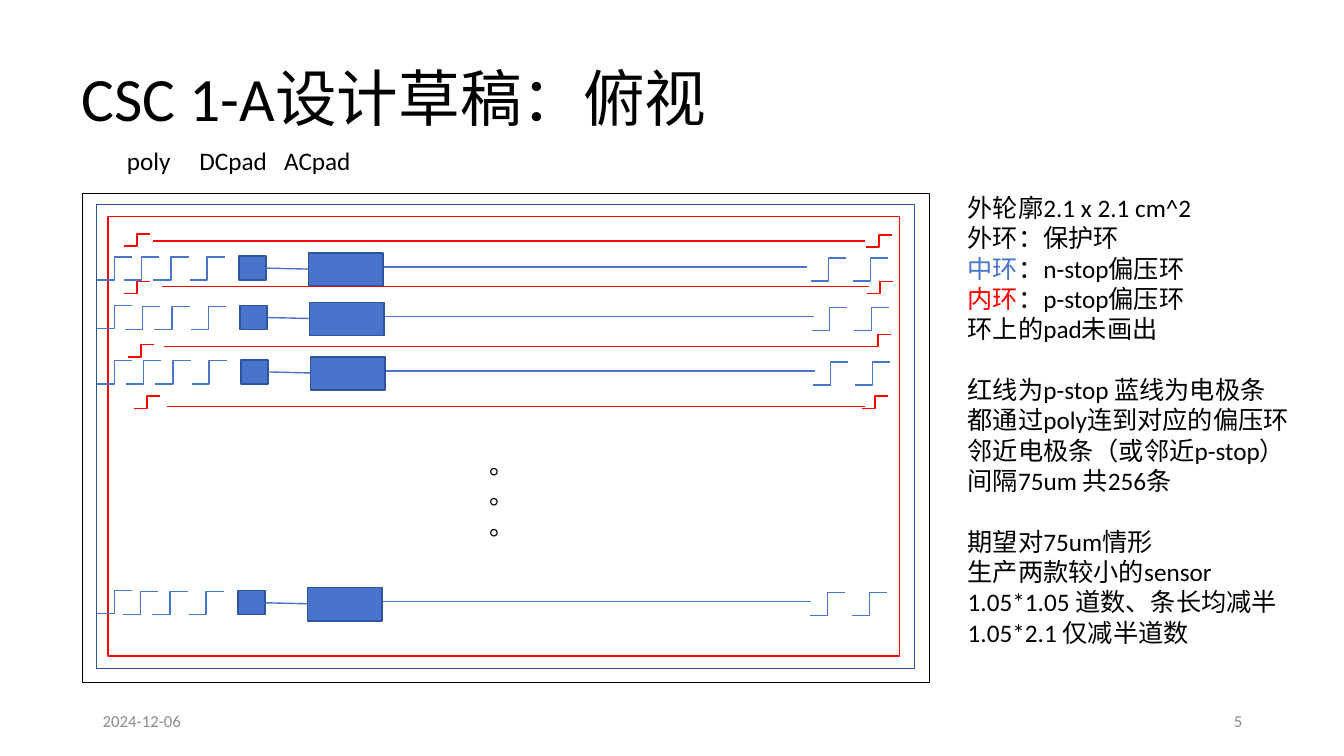
"""Builds the top-view slide of the CSC 1-A sensor design draft."""
from typing import NamedTuple

from lxml import etree
from pptx import Presentation, util as u
from pptx.dml import color
from pptx.enum import shapes, text
from pptx.oxml import ns

PX = 9144
COLOURS = {"black": "000000", "blue": "4874CB", "edge": "2E54A1",
           "red": "FF0000", "grey": "8C8C8C"}
CONNECTOR = shapes.MSO_CONNECTOR
ANCHOR = text.MSO_ANCHOR
ALIGN = text.PP_ALIGN


class Box(NamedTuple):
    left: int
    top: int
    width: int
    height: int


class Ring(NamedTuple):
    box: Box
    colour: str


class Run(NamedTuple):
    words: str
    colour: str = "black"


class Paragraph(NamedTuple):
    runs: tuple[Run, ...]
    before: int = 0


class Label(NamedTuple):
    box: Box
    paragraphs: tuple[Paragraph, ...]
    size: int = 18
    anchor: ANCHOR = ANCHOR.TOP
    align: ALIGN = ALIGN.LEFT
    spacing: float = 1.0
    tabs: tuple[int, ...] = ()


class Electrode(NamedTuple):
    left: int
    top: int
    end: int
    ring_poly_top: int


class PStop(NamedTuple):
    start: int
    end: int
    y: int
    left_poly: tuple[int, int]
    right_poly: tuple[int, int]


def line(words: str, before: int = 0) -> Paragraph:
    return Paragraph((Run(words),), before)


def ring_note(ring: str, colour: str, rest: str) -> Paragraph:
    return Paragraph((Run(ring, colour), Run(rest)))


RINGS = (Ring(Box(82, 192, 840, 485), "black"),
         Ring(Box(96, 203, 811, 460), "edge"),
         Ring(Box(107, 215, 785, 436), "red"))

ELECTRODES = (Electrode(237, 251, 800, 255), Electrode(238, 300, 807, 303),
              Electrode(239, 354, 808, 358), Electrode(236, 583, 804, 586))

P_STOPS = (PStop(152, 858, 239, (123, 232), (859, 233)),
           PStop(161, 862, 284, (123, 279), (860, 279)),
           PStop(163, 858, 344, (127, 342), (858, 332)),
           PStop(166, 858, 403, (133, 393), (855, 393)))

NOTES = (line("外轮廓2.1 x 2.1 cm^2"), line("外环：保护环"),
         ring_note("中环", "blue", "：n-stop偏压环"),
         ring_note("内环", "red", "：p-stop偏压环"),
         line("环上的pad未画出"),
         line("红线为p-stop 蓝线为电极条", 22), line("都通过poly连到对应的偏压环"),
         line("邻近电极条（或邻近p-stop）"), line("间隔75um 共256条"),
         line("期望对75um情形", 22), line("生产两款较小的sensor"),
         line("1.05*1.05 道数、条长均减半"), line("1.05*2.1 仅减半道数"))

LABELS = (
    Label(Box(71, 28, 1150, 145), (line("CSC 1-A设计草稿：俯视"),), 44,
          ANCHOR.MIDDLE, spacing=0.9),
    Label(Box(116, 139, 319, 40), (line("poly\tDCpad\tACpad"),), tabs=(72, 156)),
    Label(Box(950, 186, 384, 464), NOTES),
    Label(Box(476, 441, 52, 101), (line("。"),) * 3),
    Label(Box(92, 695, 300, 40), (Paragraph((Run("2024-12-06", "grey"),)),), 12,
          ANCHOR.MIDDLE),
    Label(Box(942, 695, 300, 40), (Paragraph((Run("5", "grey"),)),), 12,
          ANCHOR.MIDDLE, ALIGN.RIGHT),
)


def rgb(name: str) -> color.RGBColor:
    return color.RGBColor.from_string(COLOURS[name])


def draw_rect(slide, box: Box, edge: str, fill: str = "") -> None:
    rect = slide.shapes.add_shape(shapes.MSO_SHAPE.RECTANGLE, *(v * PX for v in box))
    rect.shadow.inherit = False
    rect.line.color.rgb = rgb(edge)
    rect.line.width = u.Pt(1)
    if fill:
        rect.fill.solid()
        rect.fill.fore_color.rgb = rgb(fill)
    else:
        rect.fill.background()


def draw_line(slide, x1: int, y1: int, x2: int, y2: int, colour: str,
              kind: CONNECTOR = CONNECTOR.STRAIGHT) -> None:
    wire = slide.shapes.add_connector(kind, *(v * PX for v in (x1, y1, x2, y2)))
    wire.line.color.rgb = rgb(colour)
    wire.line.width = u.Pt(1)
    etree.SubElement(wire._element.spPr, ns.qn("a:effectLst"))


def draw_poly(slide, left: int, top: int, colour: str) -> None:
    width, height = (26, 12) if colour == "red" else (35, 23)
    draw_line(slide, left, top + height, left + width, top, colour, CONNECTOR.ELBOW)


def draw_electrode(slide, strip: Electrode) -> None:
    left, top = strip.left, strip.top
    for offset in (-114, -85, -49):
        draw_poly(slide, left + offset, top + 4, "blue")
    draw_poly(slide, 96, strip.ring_poly_top, "blue")
    draw_rect(slide, Box(left, top + 3, 27, 24), "edge", "blue")
    draw_rect(slide, Box(left + 69, top, 74, 33), "edge", "blue")
    draw_line(slide, left + 27, top + 15, left + 69, top + 16, "blue")
    draw_line(slide, left + 144, top + 14, strip.end, top + 14, "blue")
    for offset in (567, 609):
        draw_poly(slide, left + offset, top + 5, "blue")


def draw_p_stop(slide, stop: PStop) -> None:
    draw_line(slide, stop.start, stop.y, stop.end, stop.y, "red")
    for left, top in (stop.left_poly, stop.right_poly):
        draw_poly(slide, left, top, "red")


def draw_label(slide, label: Label) -> None:
    frame = slide.shapes.add_textbox(*(v * PX for v in label.box)).text_frame
    frame.word_wrap = True
    frame.vertical_anchor = label.anchor
    for index, content in enumerate(label.paragraphs):
        paragraph = frame.add_paragraph() if index else frame.paragraphs[0]
        paragraph.alignment = label.align
        paragraph.line_spacing = label.spacing
        paragraph.space_before = u.Pt(content.before)
        if label.tabs:
            stops = etree.SubElement(paragraph._p.get_or_add_pPr(), ns.qn("a:tabLst"))
            for position in label.tabs:
                etree.SubElement(stops, ns.qn("a:tab"), pos=str(position * PX), algn="l")
        for part in content.runs:
            run = paragraph.add_run()
            run.text = part.words
            run.font.name = "Calibri"
            run.font.size = u.Pt(label.size)
            run.font.color.rgb = rgb(part.colour)


def main() -> None:
    deck = Presentation()
    deck.slide_width, deck.slide_height = 1333 * PX, 750 * PX
    slide = deck.slides.add_slide(deck.slide_layouts[6])
    for ring in RINGS:
        draw_rect(slide, ring.box, ring.colour)
    for strip in ELECTRODES:
        draw_electrode(slide, strip)
    for stop in P_STOPS:
        draw_p_stop(slide, stop)
    for label in LABELS:
        draw_label(slide, label)
    deck.save("out.pptx")


if __name__ == "__main__":
    main()
